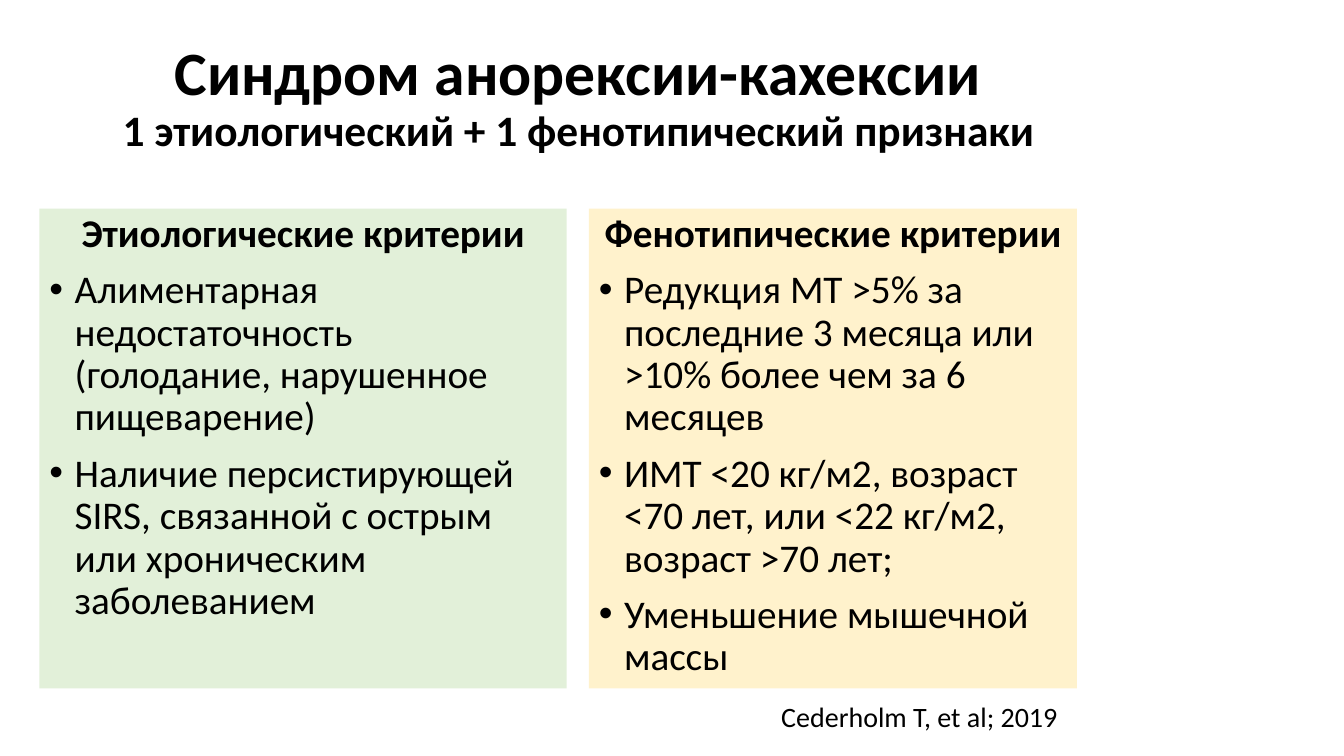
from lxml import etree
from pptx import Presentation
from pptx.dml.color import RGBColor
from pptx.enum.text import MSO_ANCHOR, MSO_AUTO_SIZE, PP_ALIGN
from pptx.oxml.ns import qn
from pptx.util import Inches, Pt

LEFT, CENTER = PP_ALIGN.LEFT, PP_ALIGN.CENTER
TOP, MIDDLE = MSO_ANCHOR.TOP, MSO_ANCHOR.MIDDLE
NONE, GROW = MSO_AUTO_SIZE.NONE, MSO_AUTO_SIZE.SHAPE_TO_FIT_TEXT
BLACK = RGBColor(0x00, 0x00, 0x00)
GREEN = RGBColor(0xE2, 0xF0, 0xD9)
CREAM = RGBColor(0xFF, 0xF2, 0xCC)

TITLE = [
    ("Синдром анорексии-кахексии", 44),
    ("1 этиологический + 1 фенотипический признаки", 31),
]
PANELS = [
    {"left": 0.39, "width": 5.23, "fill": GREEN,
     "head": "Этиологические критерии",
     "items": [
         "Алиментарная недостаточность (голодание, нарушенное пищеварение)",
         "Наличие персистирующей SIRS, связанной с острым или хроническим "
         "заболеванием",
     ]},
    {"left": 5.84, "width": 4.84, "fill": CREAM,
     "head": "Фенотипические критерии",
     "items": [
         "Редукция МТ >5% за последние 3 месяца или >10% более чем за 6 месяцев",
         "ИМТ <20 кг/м2, возраст <70 лет, или <22 кг/м2, возраст >70 лет;",
         "Уменьшение мышечной массы",
     ]},
]
SOURCE = "Cederholm T, et al; 2019"
INDENT = Inches(0.25)


def put(obj, **vals):
    """Set each named value on an object."""
    for name, val in vals.items():
        setattr(obj, name, val)


def place(shape, *box):
    """Move and size a shape, in inches."""
    left, top, width, height = map(Inches, box)
    put(shape, left=left, top=top, width=width, height=height)


def write(para, text, size, bold=False):
    """Add a formatted run to a paragraph."""
    run = para.add_run()
    run.text = text
    put(run.font, name="Calibri", size=Pt(size), bold=bold)
    run.font.color.rgb = BLACK


def mark(para, sign):
    """Set a hanging bullet, or none, on a paragraph."""
    props = para._p.get_or_add_pPr()
    props.set("marL", str(INDENT if sign else 0))
    props.set("indent", str(-INDENT if sign else 0))
    if sign:
        font = etree.SubElement(props, qn("a:buFont"))
        font.set("typeface", "Arial")
        etree.SubElement(props, qn("a:buChar")).set("char", sign)
    else:
        etree.SubElement(props, qn("a:buNone"))


def fill_panel(shape, panel):
    """Write one coloured list of criteria."""
    place(shape, panel["left"], 2.07, panel["width"], 4.76)
    shape.fill.solid()
    shape.fill.fore_color.rgb = panel["fill"]
    frame = shape.text_frame
    put(frame, word_wrap=True, auto_size=NONE, vertical_anchor=TOP)
    for num, text in enumerate([panel["head"], *panel["items"]]):
        para = frame.add_paragraph() if num else frame.paragraphs[0]
        mark(para, "•" if num else "")
        put(para, alignment=LEFT if num else CENTER, line_spacing=0.9,
            space_before=Pt(10 if num else 0))
        write(para, text, 28, not num)


def main():
    """Build the slide on the two criteria groups."""
    deck = Presentation()
    put(deck, slide_width=Inches(13.33), slide_height=Inches(7.5))
    slide = deck.slides.add_slide(deck.slide_layouts[3])

    title = slide.shapes.title
    place(title, 0.47, 0.26, 10.53, 1.45)
    put(title.text_frame, word_wrap=True, auto_size=NONE, vertical_anchor=MIDDLE)
    para = title.text_frame.paragraphs[0]
    put(para, alignment=CENTER, line_spacing=0.9, space_before=Pt(0))
    for num, (text, size) in enumerate(TITLE):
        if num:
            para.add_line_break()
        write(para, text, size, True)

    for num, panel in enumerate(PANELS, 1):
        fill_panel(slide.placeholders[num], panel)

    note = slide.shapes.add_textbox(0, 0, 0, 0)
    place(note, 7.65, 6.89, 3.03, 0.44)
    put(note.text_frame, word_wrap=False, auto_size=GROW)
    write(note.text_frame.paragraphs[0], SOURCE, 20)

    deck.save("out.pptx")


if __name__ == "__main__":
    main()
